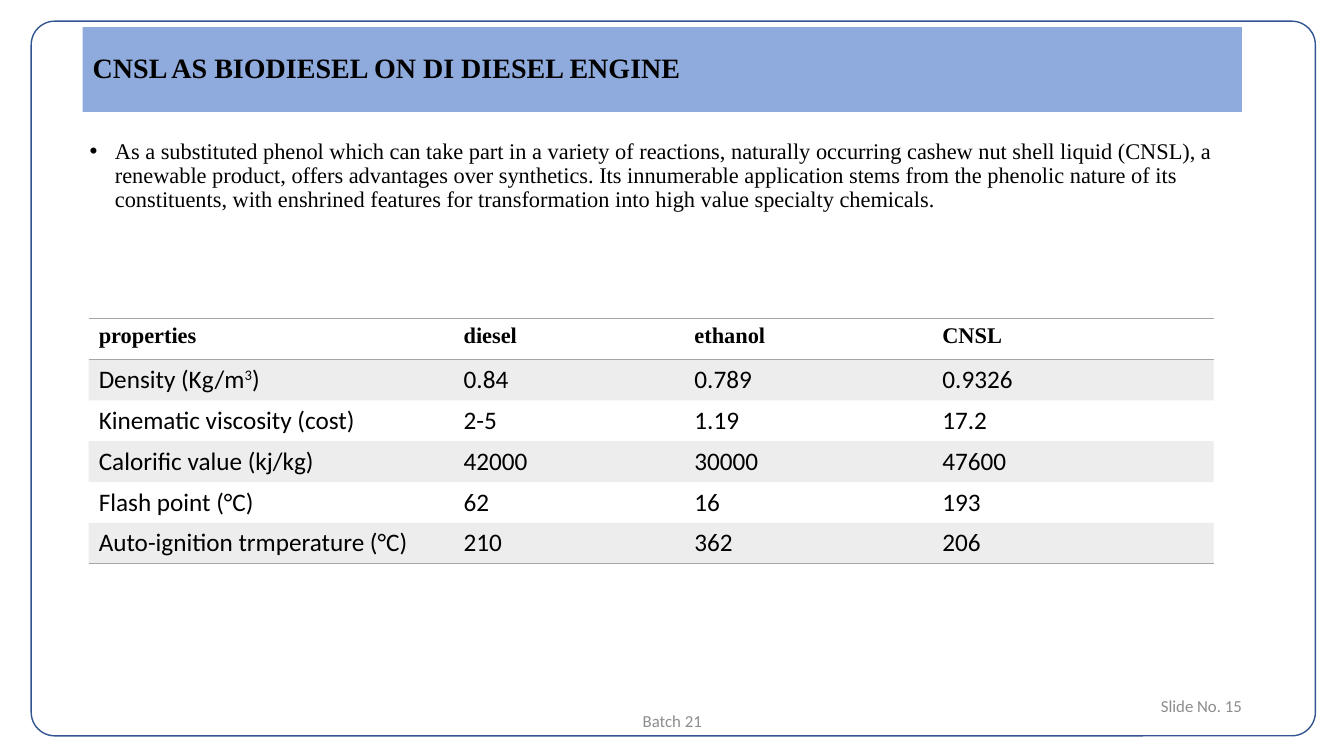
import pptx
import pptx.dml.color
import pptx.enum.shapes
import pptx.enum.text
import pptx.oxml
import pptx.oxml.ns
import pptx.util

Pt = pptx.util.Pt
RGB = pptx.dml.color.RGBColor
Align = pptx.enum.text.PP_ALIGN
Anchor = pptx.enum.text.MSO_ANCHOR
BLACK = RGB(0x00, 0x00, 0x00)
BLUE = RGB(0x8F, 0xAA, 0xDC)
NAVY = RGB(0x32, 0x54, 0x91)
GREY = RGB(0x8C, 0x8C, 0x8C)
RULE = RGB(0xA5, 0xA5, 0xA5)
SERIF, SANS = "Times New Roman", "Calibri"
PLAIN = "{2D5ABB26-0587-4C30-8999-92F81FD0307C}"

TITLE = "CNSL AS BIODIESEL ON DI DIESEL ENGINE"
INTRO = (
    "As a substituted phenol which can take part in a variety of reactions, "
    "naturally occurring cashew nut shell liquid (CNSL), a renewable product, "
    "offers advantages over synthetics. Its innumerable application stems from "
    "the phenolic nature of its constituents, with enshrined features for "
    "transformation into high value specialty chemicals."
)
WIDTHS = [260.64, 164.88, 177.12, 200.88]
ROWS = [
    ["properties", "diesel", "ethanol", "CNSL"],
    ["Density (Kg/m^3^)", "0.84", "0.789", "0.9326"],
    ["Kinematic viscosity (cost)", "2-5", "1.19", "17.2"],
    ["Calorific value (kj/kg)", "42000", "30000", "47600"],
    ["Flash point (°C)", "62", "16", "193"],
    ["Auto-ignition trmperature (°C)", "210", "362", "206"],
]


def node(xml):
    """Parse one drawing element, declaring its namespace."""
    tag, rest = xml[1:].split(" ", 1)
    return pptx.oxml.parse_xml(f"<{tag} {pptx.oxml.ns.nsdecls('a')} {rest}")


def style(para, face, size, color, bold=False):
    """Set the font of a paragraph."""
    font = para.font
    font.name, font.size, font.bold = face, Pt(size), bold
    font.color.rgb = color


def place(shape, box):
    """Move a shape to a box given in points."""
    shape.left, shape.top, shape.width, shape.height = map(Pt, box)


def head(slide, box):
    """Fill the title band."""
    band = slide.shapes.title
    place(band, box)
    band.fill.solid()
    band.fill.fore_color.rgb = BLUE
    frame = band.text_frame
    frame.text = TITLE
    frame.auto_size = pptx.enum.text.MSO_AUTO_SIZE.NONE
    frame.vertical_anchor = Anchor.MIDDLE
    para = frame.paragraphs[0]
    para.alignment, para.line_spacing = Align.LEFT, 0.9
    style(para, SERIF, 20, BLACK, True)


def body(slide, box):
    """Fill the bulleted introduction."""
    text = slide.placeholders[1]
    place(text, box)
    frame = text.text_frame
    frame.text = INTRO
    frame.auto_size = pptx.enum.text.MSO_AUTO_SIZE.NONE
    frame.vertical_anchor = Anchor.TOP
    para = frame.paragraphs[0]
    para.line_spacing, para.space_before = 0.9, Pt(0)
    props = para._p.get_or_add_pPr()
    props.set("marL", str(Pt(18)))
    props.set("indent", str(Pt(-18)))
    props.append(node('<a:buFont typeface="Arial"/>'))
    props.append(node('<a:buChar char="•"/>'))
    style(para, SERIF, 16, BLACK)


def note(slide, box, text, align):
    """Add a grey footer line."""
    frame = slide.shapes.add_textbox(*map(Pt, box)).text_frame
    frame.word_wrap = True
    frame.vertical_anchor = Anchor.MIDDLE
    frame.text = text
    para = frame.paragraphs[0]
    para.alignment = align
    style(para, SANS, 12, GREY)


def border(slide, box):
    """Draw the rounded page border."""
    kind = pptx.enum.shapes.MSO_SHAPE.ROUNDED_RECTANGLE
    edge = slide.shapes.add_shape(kind, *map(Pt, box))
    edge.adjustments[0] = 0.033
    edge.shadow.inherit = False
    edge.fill.background()
    edge.line.color.rgb = NAVY
    edge.line.width = Pt(1)


def paint(cell, band, sides):
    """Shade a banded cell and rule the given sides."""
    if band:
        cell.fill.solid()
        cell.fill.fore_color.rgb = RULE
        color = cell._tc.tcPr.find(".//" + pptx.oxml.ns.qn("a:srgbClr"))
        color.append(node('<a:alpha val="20000"/>'))
    else:
        cell.fill.background()
    props = cell._tc.get_or_add_tcPr()
    for spot, side in enumerate(sides):
        props.insert(spot, node(
            f'<a:ln{side} w="{Pt(1)}"><a:solidFill>'
            f'<a:srgbClr val="{RULE}"/></a:solidFill></a:ln{side}>'))


def fill(cell, text, top):
    """Write a cell, raising the parts between carets."""
    para = cell.text_frame.paragraphs[0]
    for spot, part in enumerate(text.split("^")):
        run = para.add_run()
        run.text = part
        if spot % 2:
            run._r.get_or_add_rPr().set("baseline", "30000")
    if top:
        style(para, SERIF, 16, BLACK, True)
    else:
        style(para, SANS, 18, BLACK)


def table(slide, box):
    """Add the table of fuel properties."""
    grid = slide.shapes.add_table(len(ROWS), len(WIDTHS), *map(Pt, box)).table
    grid.first_row = grid.horz_banding = False
    grid._tbl.tblPr[0].text = PLAIN
    for col, width in zip(grid.columns, WIDTHS):
        col.width = Pt(width)
    rules = {0: "TB", len(ROWS) - 1: "B"}
    for r, row in enumerate(ROWS):
        grid.rows[r].height = Pt(box[3] / len(ROWS))
        for c, text in enumerate(row):
            cell = grid.cell(r, c)
            fill(cell, text, r == 0)
            paint(cell, r % 2 == 1, rules.get(r, ""))


def main():
    """Build and save the slide."""
    deck = pptx.Presentation()
    deck.slide_width, deck.slide_height = Pt(960), Pt(540)
    slide = deck.slides.add_slide(deck.slide_layouts[1])
    head(slide, (59.04, 19.44, 828, 60.48))
    body(slide, (56.88, 96.48, 843.12, 365.04))
    note(slide, (318.24, 500.4, 324, 28.8), "Batch 21", Align.CENTER)
    note(slide, (678.24, 489.6, 216, 28.8), "Slide No. 15", Align.RIGHT)
    border(slide, (22.32, 15.12, 917.28, 510.48))
    table(slide, (63.36, 227.52, sum(WIDTHS), 175.2))
    deck.save("out.pptx")


if __name__ == "__main__":
    main()
